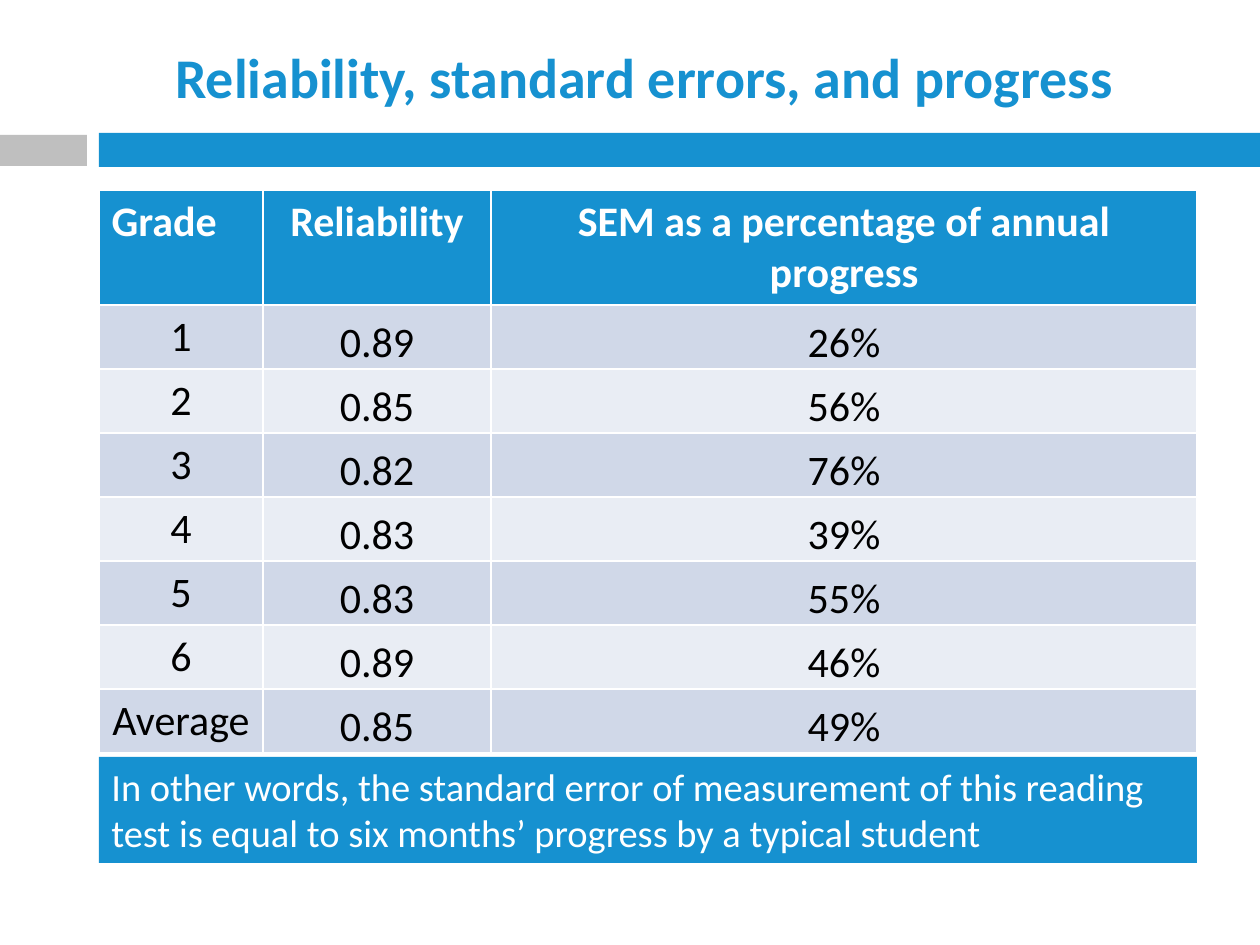
"""Build the slide on reliability, standard errors and progress."""
from pptx import Presentation
from pptx import util as u
from pptx.dml.color import RGBColor
from pptx.enum import shapes, text

BLUE = RGBColor(0x16, 0x91, 0xD0)
GREY = RGBColor(0xBF, 0xBF, 0xBF)
WHITE = RGBColor(0xFF, 0xFF, 0xFF)
BLACK = RGBColor(0x00, 0x00, 0x00)
BANDS = [RGBColor(0xE9, 0xED, 0xF4), RGBColor(0xD0, 0xD8, 0xE8)]

TITLE = "Reliability, standard errors, and progress"
HEADER = ("Grade", "Reliability", "SEM as a percentage of annual progress")
RESULTS = [
    ("1", "0.89", "26%"),
    ("2", "0.85", "56%"),
    ("3", "0.82", "76%"),
    ("4", "0.83", "39%"),
    ("5", "0.83", "55%"),
    ("6", "0.89", "46%"),
    ("Average", "0.85", "49%"),
]
NOTE = ("In other words, the standard error of measurement of this reading "
        "test is equal to six months’ progress by a typical student")

LEFT, TABLE_TOP = 99, 190
COLUMN_WIDTHS = (164, 228, 706)
HEADER_HEIGHT, ROW_HEIGHT = 115, 64
TABLE_WIDTH = sum(COLUMN_WIDTHS)
ROW_HEIGHTS = [HEADER_HEIGHT] + [ROW_HEIGHT] * len(RESULTS)

TITLE_FONT = {"size": u.Pt(32), "bold": True}
HEADER_FONT = {"size": u.Pt(24), "bold": True}
BODY_FONT = {"size": u.Pt(24), "bold": False}
NOTE_FONT = {"size": u.Pt(22)}
CENTER, START = text.PP_ALIGN.CENTER, text.PP_ALIGN.LEFT
MIDDLE = text.MSO_ANCHOR.MIDDLE


def px(length):
    return u.Emu(round(length * 914400 / 126))


def write(frame, words, color, font, align):
    paragraph = frame.paragraphs[0]
    paragraph.alignment = align
    span = paragraph.add_run()
    span.text = words
    span.font.color.rgb = color
    for name, value in {"name": "Calibri", **font}.items():
        setattr(span.font, name, value)


def add_bar(page, place, color):
    bar = page.shapes.add_shape(shapes.MSO_SHAPE.RECTANGLE, *map(px, place))
    bar.shadow.inherit = False
    bar.fill.solid()
    bar.fill.fore_color.rgb = color
    bar.line.fill.background()
    return bar


def add_results(page):
    table = page.shapes.add_table(
        len(ROW_HEIGHTS), len(COLUMN_WIDTHS), px(LEFT), px(TABLE_TOP),
        px(TABLE_WIDTH), px(sum(ROW_HEIGHTS))).table
    for column, width in zip(table.columns, COLUMN_WIDTHS):
        column.width = px(width)
    for row, height in zip(table.rows, ROW_HEIGHTS):
        row.height = px(height)
    for r, values in enumerate([HEADER] + RESULTS):
        for c, value in enumerate(values):
            cell = table.cell(r, c)
            cell.fill.solid()
            cell.fill.fore_color.rgb = BANDS[r % 2] if r else BLUE
            if r and c:
                cell.vertical_anchor = text.MSO_ANCHOR.BOTTOM
                cell.margin_left = cell.margin_right = cell.margin_top = px(1)
                cell.margin_bottom = 0
            write(cell.text_frame, value, BLACK if r else WHITE,
                  BODY_FONT if r else HEADER_FONT, CENTER if r or c else START)


def main():
    deck = Presentation()
    deck.slide_width, deck.slide_height = px(1260), px(945)
    page = deck.slides.add_slide(deck.slide_layouts[6])
    add_bar(page, (LEFT, 133, 1161, 34), BLUE)
    add_bar(page, (0, 135, 87, 31), GREY)

    title = page.shapes.add_textbox(*map(px, (LEFT, 33, 1091, 86))).text_frame
    title.word_wrap = True
    title.vertical_anchor = MIDDLE
    write(title, TITLE, BLUE, TITLE_FONT, CENTER)

    add_results(page)

    note = add_bar(page, (LEFT, 757, TABLE_WIDTH, 106), BLUE).text_frame
    note.word_wrap = True
    note.vertical_anchor = text.MSO_ANCHOR.TOP
    write(note, NOTE, WHITE, NOTE_FONT, START)
    deck.save("out.pptx")


if __name__ == "__main__":
    main()
